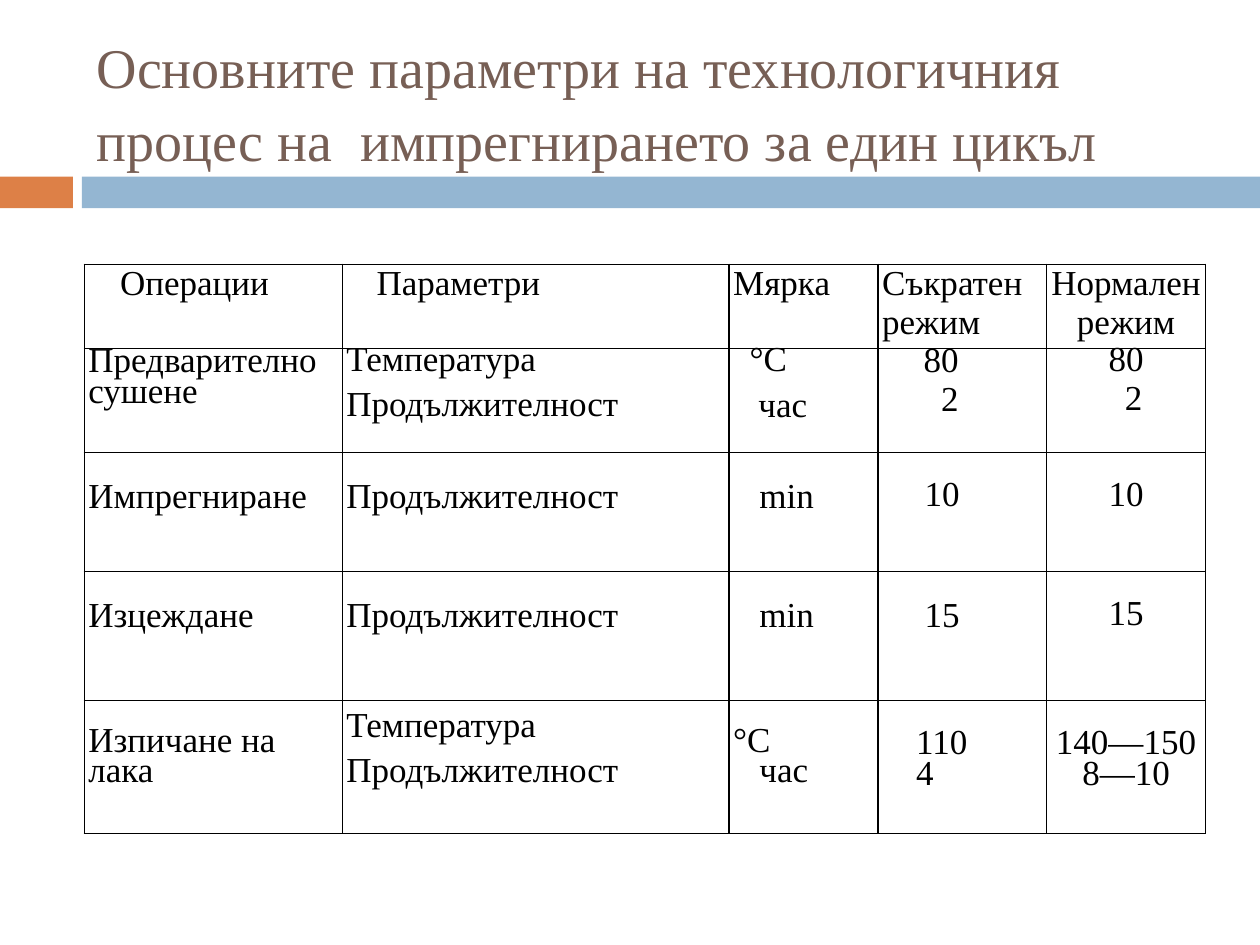
import dataclasses

import lxml.etree
import pptx
import pptx.dml.color
import pptx.enum.shapes
import pptx.enum.text
import pptx.oxml.ns
import pptx.util

Cm = pptx.util.Cm
Pt = pptx.util.Pt
LEFT = pptx.enum.text.PP_ALIGN.LEFT
MID = pptx.enum.text.PP_ALIGN.CENTER
FACE = "Times New Roman"


@dataclasses.dataclass
class Bar:
    left: float
    width: float
    color: str


@dataclasses.dataclass
class Line:
    text: str
    indent: float = 0
    gap: int = 0
    fixed: bool = True


@dataclasses.dataclass
class Entry:
    lines: list[Line]
    lead: int = 0
    pitch: float = 9
    align: int = LEFT


BARS = [Bar(0, 1.47, "DD8047"), Bar(1.65, 23.75, "94B6D2")]
WIDTHS = [5.2, 7.8, 3, 3.4, 3.2]
HEIGHTS = [1.6, 2.1, 2.4, 2.6, 2.68]
SPAN = "Продължителност"


def head(text: str, indent: float = 0, align: int = LEFT) -> Entry:
    return Entry([Line(text, indent, fixed=False)], align=align)


def timed(name: str, value: str, pitch: float) -> list[Entry]:
    return [
        Entry([Line(name)], 3),
        Entry([Line(SPAN)], 3),
        Entry([Line("min", 0.53)], 3),
        Entry([Line(value, 0.86)], 3, pitch),
        Entry([Line(value)], 3, 8.8, MID),
    ]


ROWS = [
    [
        head("Операции", 0.64),
        head("Параметри", 0.61),
        head("Мярка"),
        head("Съкратен режим"),
        head("Нормален режим", align=MID),
    ],
    [
        Entry([Line("Предварително"), Line("сушене", gap=1)], 1),
        Entry([Line("Температура"), Line(SPAN, gap=2)], 1, 8.7),
        Entry([Line("°С", 0.33), Line("час", 0.51, 2)], 1, 8.8),
        Entry([Line("80", 0.84), Line("2", 1.19, fixed=False)], 1),
        Entry([Line("80"), Line("2", 0.3, fixed=False)], 1, 8.8, MID),
    ],
    timed("Импрегниране", "10", 8.8),
    timed("Изцеждане", "15", 9),
    [
        Entry([Line("Изпичане на"), Line("лака", gap=1)], 3, 8.5),
        Entry([Line("Температура"), Line(SPAN, gap=2)], 2, 8.5),
        Entry([Line("°С"), Line("час", 0.53, 1)], 3, 8.5),
        Entry([Line("110", 0.69), Line("4", 0.69, 1)], 3, 8.8),
        Entry([Line("140—150"), Line("8—10", gap=1)], 3, 8.8, MID),
    ],
]


def tint(target, color: str) -> None:
    target.rgb = pptx.dml.color.RGBColor.from_string(color)


def apply(target, values: dict) -> None:
    for name, value in values.items():
        setattr(target, name, value)


def write(para, text: str, size: float, color: str) -> None:
    run = para.add_run()
    run.text = text
    apply(run.font, {"name": FACE, "size": Pt(size), "bold": False})
    tint(run.font.color, color)


def draw_bar(slide, bar: Bar) -> None:
    kind = pptx.enum.shapes.MSO_SHAPE.RECTANGLE
    shape = slide.shapes.add_shape(kind, Cm(bar.left), Cm(3.56), Cm(bar.width), Cm(0.64))
    shape.shadow.inherit = False
    shape.fill.solid()
    tint(shape.fill.fore_color, bar.color)
    shape.line.fill.background()


def draw_title(slide, text: str) -> None:
    frame = slide.shapes.add_textbox(Cm(1.7), Cm(0.64), Cm(22.66), Cm(2.74)).text_frame
    apply(frame, {"word_wrap": True, "vertical_anchor": pptx.enum.text.MSO_ANCHOR.MIDDLE})
    para = frame.paragraphs[0]
    para.line_spacing = 1.08
    write(para, text, 32, "775F55")


def edge(cell) -> None:
    qn = pptx.oxml.ns.qn
    props = cell._tc.get_or_add_tcPr()
    for place, side in enumerate(("a:lnL", "a:lnR", "a:lnT", "a:lnB")):
        line = lxml.etree.Element(qn(side), w=str(Pt(1)))
        fill = lxml.etree.SubElement(line, qn("a:solidFill"))
        lxml.etree.SubElement(fill, qn("a:srgbClr"), val="000000")
        props.insert(place, line)


def fill_cell(cell, entry: Entry) -> None:
    apply(cell, {
        "margin_left": Cm(0.08),
        "margin_right": Cm(0.08),
        "margin_top": Pt(entry.lead * entry.pitch),
        "margin_bottom": 0,
    })
    cell.fill.background()
    edge(cell)
    frame = cell.text_frame
    for place, line in enumerate(entry.lines):
        para = frame.add_paragraph() if place else frame.paragraphs[0]
        apply(para, {
            "alignment": entry.align,
            "line_spacing": Pt(entry.pitch) if line.fixed else 1.0,
            "space_before": Pt(line.gap * entry.pitch),
        })
        para._p.get_or_add_pPr().set("marL", str(Cm(line.indent)))
        write(para, line.text, 20, "000000")


def draw_table(slide) -> None:
    table = slide.shapes.add_table(
        len(ROWS), len(WIDTHS), Cm(1.7), Cm(5.33), Cm(sum(WIDTHS)), Cm(sum(HEIGHTS))
    ).table
    apply(table, {"first_row": False, "horz_banding": False})
    for column, width in zip(table.columns, WIDTHS):
        column.width = Cm(width)
    for row, height, entries in zip(table.rows, HEIGHTS, ROWS):
        row.height = Cm(height)
        for cell, entry in zip(row.cells, entries):
            fill_cell(cell, entry)


def main() -> None:
    deck = pptx.Presentation()
    apply(deck, {"slide_width": Cm(25.4), "slide_height": Cm(19.05)})
    slide = deck.slides.add_slide(deck.slide_layouts[6])
    for bar in BARS:
        draw_bar(slide, bar)
    draw_title(
        slide,
        "Основните параметри на технологичния процес на  импрегнирането за един цикъл",
    )
    draw_table(slide)
    deck.save("out.pptx")


if __name__ == "__main__":
    main()
